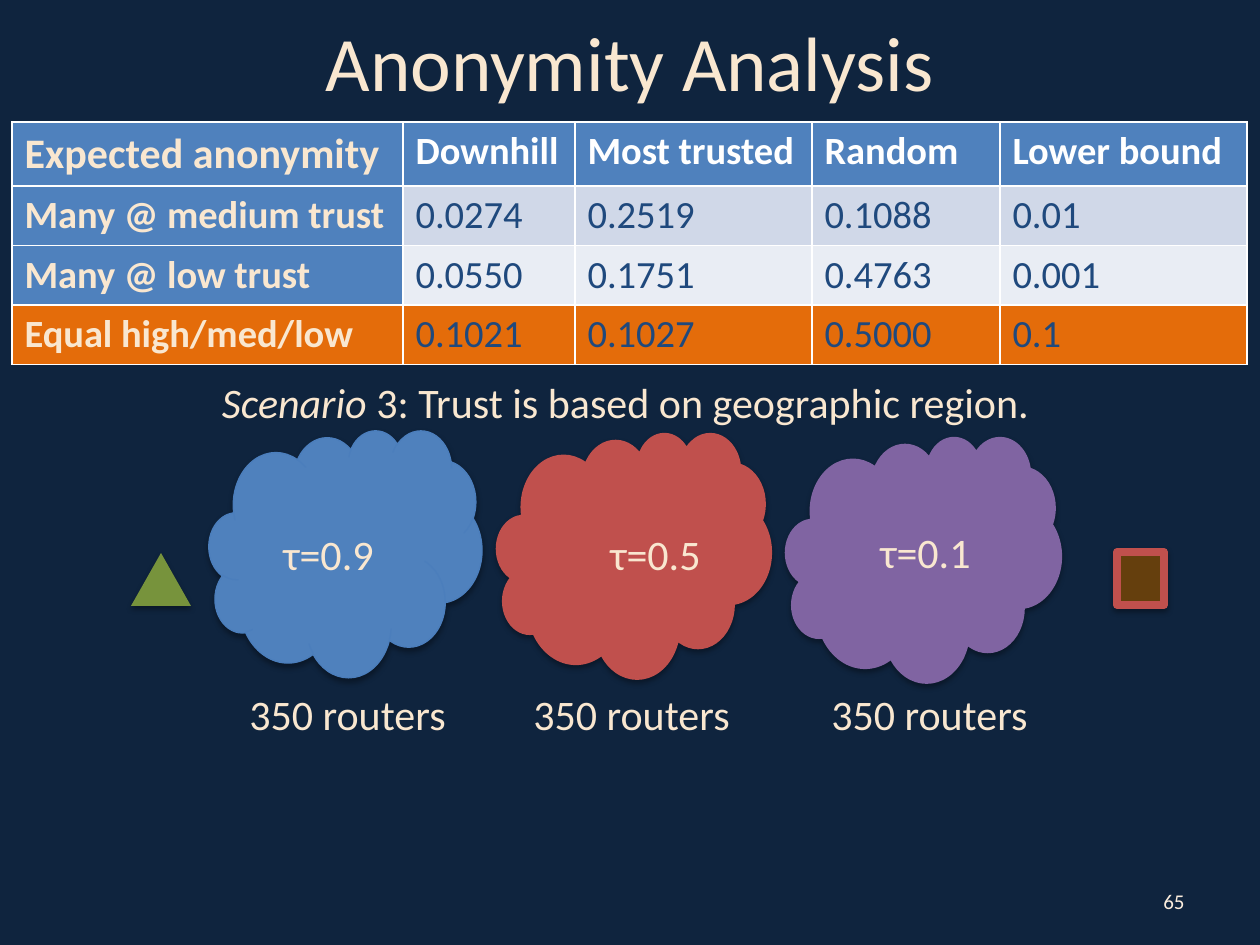
"""Build the anonymity analysis slide: results table and geographic trust scenario."""
import pptx
import pptx.dml.color
import pptx.enum.shapes
import pptx.enum.text
import pptx.oxml
import pptx.oxml.ns
import pptx.util

EMU_PER_PX = 914400 / 126
FONT = "Calibri"
CREAM, WHITE, NAVY = "F9E7D0", "FFFFFF", "1F497D"
BLUE, RED, ORANGE = "4F81BD", "C0504D", "E46C0A"
SHAPE = pptx.enum.shapes.MSO_SHAPE
ALIGN = pptx.enum.text.PP_ALIGN
ANCHOR = pptx.enum.text.MSO_ANCHOR

RESULTS = [
    ("Expected anonymity", "Downhill", "Most trusted", "Random", "Lower bound"),
    ("Many @ medium trust", "0.0274", "0.2519", "0.1088", "0.01"),
    ("Many @ low trust", "0.0550", "0.1751", "0.4763", "0.001"),
    ("Equal high/med/low", "0.1021", "0.1027", "0.5000", "0.1"),
]
ROW_FILLS = [BLUE, "D0D8E8", "E9EDF4", ORANGE]
LABEL_FILLS = [BLUE, BLUE, BLUE, ORANGE]
COLUMN_WIDTHS = [391, 172, 237, 188, 247]
ROW_HEIGHTS = [62, 59, 59, 59]

# region: cloud box, fill, trust value, trust box, router count box
REGIONS = [
    ((209, 430, 273, 247), BLUE, "τ=0.9", (271, 522, 137, 63), (224, 682, 247, 63)),
    ((496, 432, 276, 247), RED, "τ=0.5", (592, 522, 127, 63), (489, 682, 285, 63)),
    ((785, 436, 277, 247), "8064A2", "τ=0.1", (858, 520, 135, 63), (803, 682, 253, 63)),
]


def px(length):
    """Turn a length in pixels into EMU."""
    return pptx.util.Emu(round(length * EMU_PER_PX))


def rgb(code):
    """Turn a hex string into a colour."""
    return pptx.dml.color.RGBColor.from_string(code)


def paint(target, color):
    """Give a shape, cell or background a solid fill."""
    target.fill.solid()
    target.fill.fore_color.rgb = rgb(color)


def style(run, size, color, bold=False, italic=False):
    """Format one run."""
    run.font.name = FONT
    run.font.size = pptx.util.Pt(size)
    run.font.color.rgb = rgb(color)
    run.font.bold = bold
    run.font.italic = italic


def add_text(slide, box, text, size=24, color=CREAM, align=ALIGN.CENTER, anchor=ANCHOR.TOP):
    """Add a wrapped text box and return its paragraph."""
    frame = slide.shapes.add_textbox(*map(px, box)).text_frame
    frame.word_wrap = True
    frame.vertical_anchor = anchor
    frame.text = text
    paragraph = frame.paragraphs[0]
    paragraph.alignment = align
    style(paragraph.runs[0], size, color)
    return paragraph


def add_shadow(shape):
    """Drop a soft shadow below a shape."""
    shape.shadow.inherit = False
    effects = shape._element.spPr.find(pptx.oxml.ns.qn("a:effectLst"))
    effects.append(pptx.oxml.parse_xml(
        f'<a:outerShdw {pptx.oxml.ns.nsdecls("a")} blurRad="40000" dist="23000" '
        'dir="5400000" rotWithShape="0"><a:srgbClr val="000000">'
        '<a:alpha val="35000"/></a:srgbClr></a:outerShdw>'))


def add_figure(slide, kind, box, fill, line=None, line_width=0.75):
    """Add a filled preset shape with a shadow."""
    figure = slide.shapes.add_shape(kind, *map(px, box))
    paint(figure, fill)
    if line:
        figure.line.color.rgb = rgb(line)
        figure.line.width = pptx.util.Pt(line_width)
    else:
        figure.line.fill.background()
    add_shadow(figure)


def add_title(slide, text):
    """Place and format the title placeholder."""
    title = slide.shapes.title
    title.left, title.top, title.width, title.height = map(px, (63, 0, 1134, 121))
    title.text_frame.text = text
    title.text_frame.vertical_anchor = ANCHOR.MIDDLE
    title.text_frame.paragraphs[0].alignment = ALIGN.CENTER
    style(title.text_frame.paragraphs[0].runs[0], 44, CREAM)


def add_results(slide):
    """Add the table of expected anonymity."""
    box = (12, 122, sum(COLUMN_WIDTHS), sum(ROW_HEIGHTS))
    table = slide.shapes.add_table(len(RESULTS), len(COLUMN_WIDTHS), *map(px, box)).table
    table.first_col = True
    for column, width in zip(table.columns, COLUMN_WIDTHS):
        column.width = px(width)
    for r, values in enumerate(RESULTS):
        table.rows[r].height = px(ROW_HEIGHTS[r])
        for c, value in enumerate(values):
            cell = table.cell(r, c)
            cell.text_frame.text = value
            paint(cell, ROW_FILLS[r] if c else LABEL_FILLS[r])
            color = CREAM if c == 0 else WHITE if r == 0 else NAVY
            size = 24 if r == c == 0 else 22
            style(cell.text_frame.paragraphs[0].runs[0], size, color, bold=r == 0 or c == 0)


def add_scenario(slide):
    """Add the user, the destination and the trust regions between them."""
    add_figure(slide, SHAPE.RECTANGLE, (1117, 552, 47, 53), "653F0D", RED, 4.5)
    add_figure(slide, SHAPE.ISOSCELES_TRIANGLE, (131, 553, 60, 53), "77933C")
    caption = add_text(slide, (29, 370, 1193, 63), "Scenario ")
    caption.runs[0].font.italic = True
    description = caption.add_run()
    description.text = "3: Trust is based on geographic region."
    style(description, 24, CREAM)
    for cloud_box, fill, trust, trust_box, routers_box in REGIONS:
        add_figure(slide, SHAPE.CLOUD, cloud_box, fill, "4B7EBC" if fill == BLUE else None)
        add_text(slide, trust_box, trust, align=ALIGN.LEFT if fill == BLUE else ALIGN.CENTER)
        add_text(slide, routers_box, "350 routers")


def main():
    """Build and save the slide."""
    deck = pptx.Presentation()
    deck.slide_width, deck.slide_height = px(1260), px(945)
    slide = deck.slides.add_slide(deck.slide_layouts[5])
    paint(slide.background, "0F243E")
    add_title(slide, "Anonymity Analysis")
    add_results(slide)
    add_scenario(slide)
    add_text(slide, (903, 876, 294, 50), "65", 12, "FBEDDD", ALIGN.RIGHT, ANCHOR.MIDDLE)
    deck.save("out.pptx")


if __name__ == "__main__":
    main()
